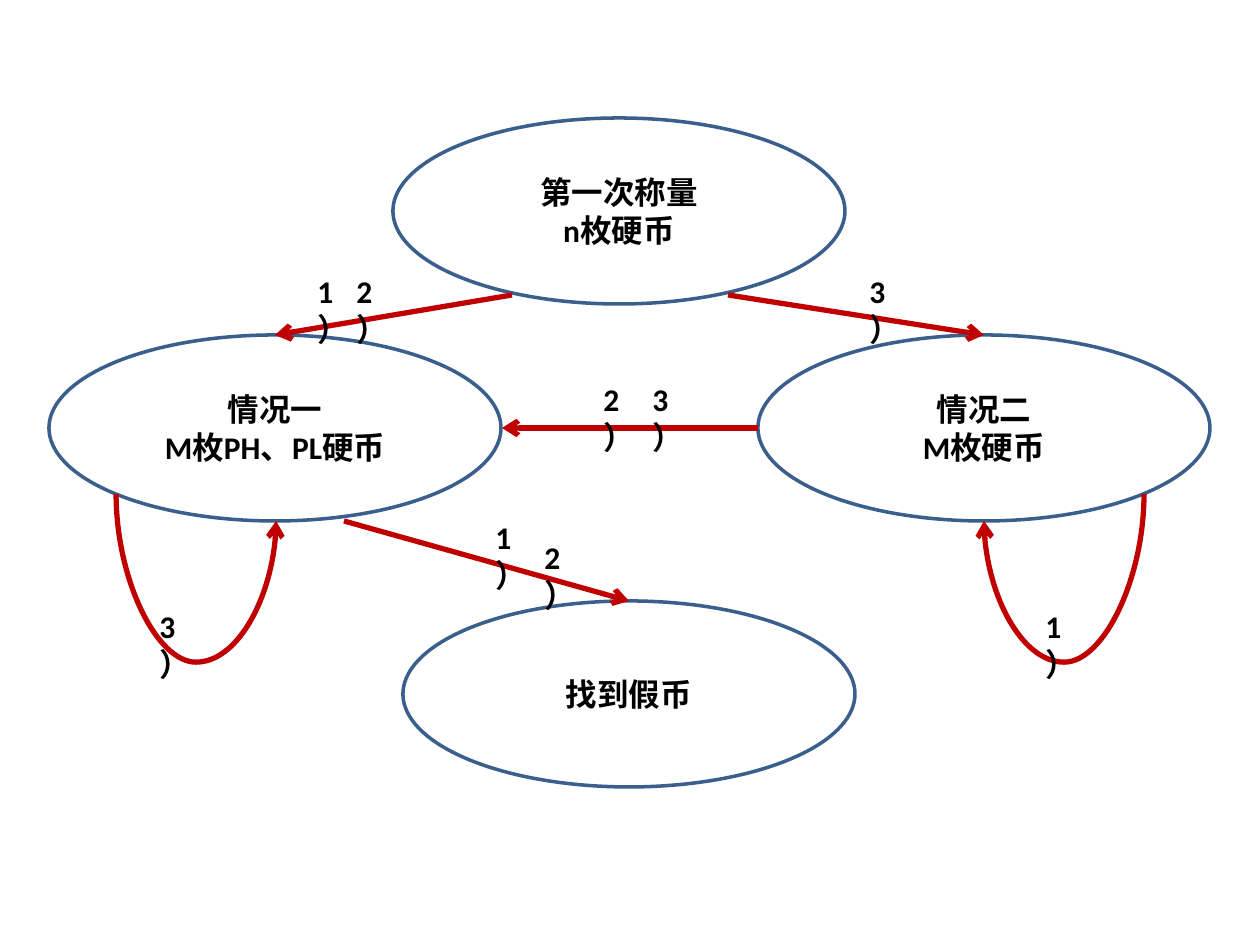
from lxml.etree import SubElement
from pptx import Presentation
from pptx.dml.color import RGBColor
from pptx.enum.shapes import MSO_CONNECTOR, MSO_SHAPE
from pptx.enum.text import MSO_ANCHOR, MSO_AUTO_SIZE, PP_ALIGN
from pptx.oxml.ns import qn
from pptx.util import Pt

SLIDE = (1260, 945)
STATE_SIZE = (452, 186)
LABEL_SIZE = (59, 50)
STATES = {
    "first": (393, 118, ["第一次称量", "n枚硬币"]),
    "case2": (758, 335, ["情况二", "M枚硬币"]),
    "case1": (49, 335, ["情况一", "M枚PH、PL硬币"]),
    "found": (403, 601, ["找到假币"]),
}
ARROWS = [
    ((512, 295), (276, 335), "case1"),
    ((728, 295), (984, 335), "case2"),
    ((758, 428), (502, 428), None),
    ((344, 521), (630, 601), "found"),
]
LOOPS = [((1144, 494), (984, 521), 90), ((116, 494), (276, 521), 270)]
LOOP_ADJUST = 623400
LABELS = [
    ("1）", 305, 266), ("2）", 344, 266), ("3）", 857, 266),
    ("2）", 591, 374), ("3）", 640, 374),
    ("1）", 483, 512), ("2）", 532, 532),
    ("3）", 147, 601), ("1）", 1033, 601),
]
FONT = {"name": "Calibri", "size": Pt(18), "bold": True}


def px(n):
    return round(n * 914400 / 126)


def color(value):
    return RGBColor.from_string(value)


def set_line(line, value, width):
    line.color.rgb = color(value)
    line.width = Pt(width)


def write(tf, lines, align):
    tf.word_wrap = True
    for i, text in enumerate(lines):
        p = tf.paragraphs[0] if i == 0 else tf.add_paragraph()
        p.alignment = align
        r = p.add_run()
        r.text = text
        for name, value in FONT.items():
            setattr(r.font, name, value)
        r.font.color.rgb = color("000000")


def add_state(s, x, y, lines):
    sp = s.shapes.add_shape(MSO_SHAPE.OVAL, *map(px, (x, y, *STATE_SIZE)))
    sp.shadow.inherit = False
    sp.fill.background()
    set_line(sp.line, "3A5F8C", 2)
    sp.text_frame.vertical_anchor = MSO_ANCHOR.MIDDLE
    write(sp.text_frame, lines, PP_ALIGN.CENTER)
    return sp


def add_arrow(s, kind, start, end):
    cxn = s.shapes.add_connector(kind, *map(px, (*start, *end)))
    set_line(cxn.line, "C00000", 3)
    SubElement(cxn.line._get_or_add_ln(), qn("a:tailEnd"), type="arrow")
    SubElement(cxn._element.spPr, qn("a:effectLst"))
    return cxn


def add_loop(s, start, end, angle):
    """Draw a U-shaped arrow as a curved connector turned by a right angle."""
    cx, cy = ((a + b) / 2 for a, b in zip(start, end))
    half_w, half_h = (abs(b - a) / 2 for a, b in zip(start, end))
    side = half_h if angle == 90 else -half_h
    cxn = add_arrow(s, MSO_CONNECTOR.CURVE,
                    (cx - side, cy - half_w), (cx + side, cy + half_w))
    spPr = cxn._element.spPr
    spPr.find(qn("a:xfrm")).set("rot", str(angle * 60000))
    guides = spPr.find(qn("a:prstGeom")).find(qn("a:avLst"))
    SubElement(guides, qn("a:gd"), name="adj1", fmla=f"val {LOOP_ADJUST}")


def add_label(s, text, x, y):
    tf = s.shapes.add_textbox(*map(px, (x, y, *LABEL_SIZE))).text_frame
    write(tf, [text], PP_ALIGN.LEFT)
    tf.auto_size = MSO_AUTO_SIZE.SHAPE_TO_FIT_TEXT


def main():
    prs = Presentation()
    prs.slide_width, prs.slide_height = map(px, SLIDE)
    s = prs.slides.add_slide(prs.slide_layouts[6])
    states = {key: add_state(s, *state) for key, state in STATES.items()}
    for start, end, target in ARROWS:
        cxn = add_arrow(s, MSO_CONNECTOR.STRAIGHT, start, end)
        if target:
            cxn.end_connect(states[target], 0)
    for loop in LOOPS:
        add_loop(s, *loop)
    for label in LABELS:
        add_label(s, *label)
    prs.save("out.pptx")


if __name__ == "__main__":
    main()
